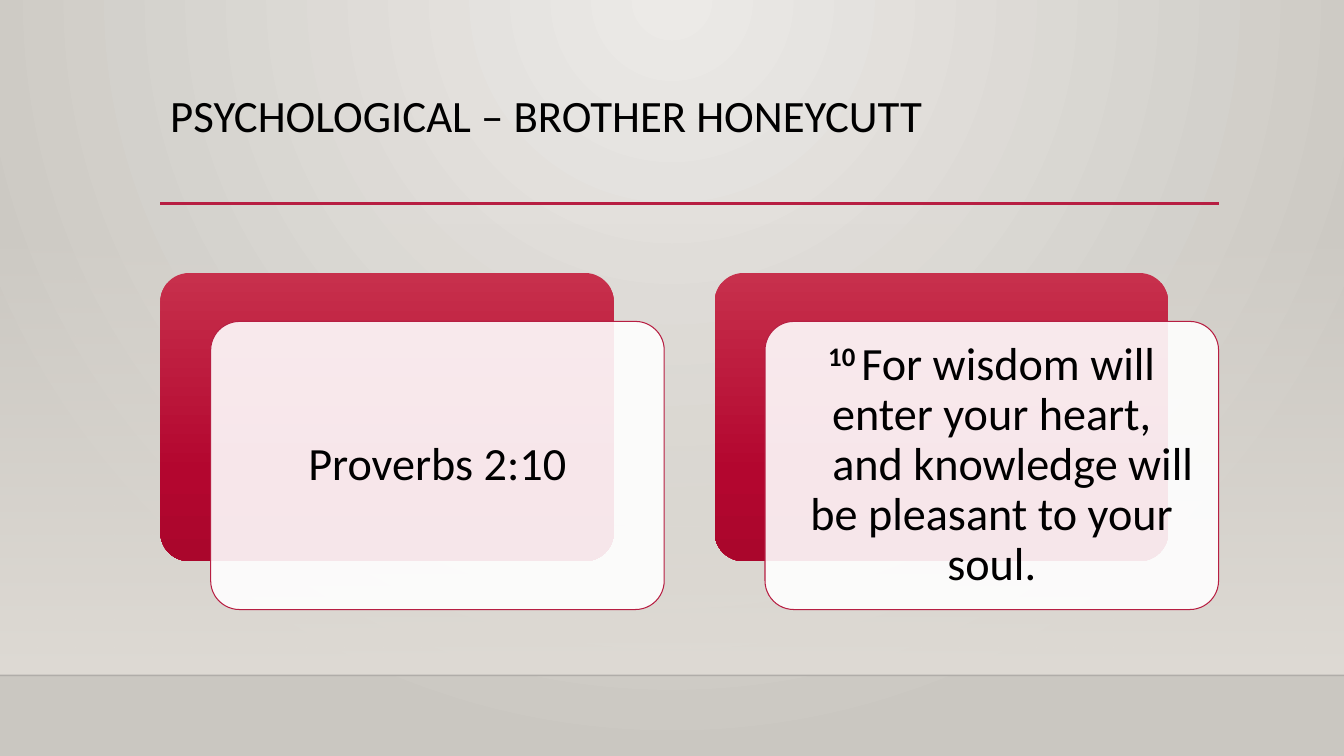
from dataclasses import dataclass
from typing import NamedTuple

from lxml.etree import SubElement
from pptx import Presentation
from pptx.dml.color import RGBColor
from pptx.enum.shapes import MSO_CONNECTOR as Connector, MSO_SHAPE as Preset
from pptx.enum.text import MSO_ANCHOR as Anchor, PP_ALIGN as Align
from pptx.oxml import parse_xml
from pptx.oxml.ns import nsdecls, qn
from pptx.util import Cm, Pt

SLIDE_WIDTH, SLIDE_HEIGHT = 33.87, 19.05
LEFT, RIGHT = 4.04, 30.73
FLOOR = 17.02
CARD_TOP, CARD_WIDTH, CARD_HEIGHT = 6.88, 11.43, 7.26
CARD_STEP = 13.97
OFFSET_X, OFFSET_Y = 1.27, 1.22
CRIMSON, BLACK, WHITE, SAND = "B71E42", "000000", "FFFFFF", "DFDBD5"
DOWNWARD = '<a:lin ang="5400000" scaled="0"/>'
FROM_TOP = '<a:path path="circle"><a:fillToRect l="43000" t="0" r="43000" b="100000"/></a:path>'


class Stop(NamedTuple):
    position: int
    color: str
    opacity: int = 100


@dataclass
class Line:
    text: str
    verse: str = ""
    indent: float = 0


@dataclass
class Card:
    lines: list[Line]


CARD_STOPS = [Stop(0, "C7304C"), Stop(69, "B3062F"), Stop(100, "AA062C")]
CARDS = [
    Card([Line("Proverbs 2:10")]),
    Card([
        Line("For wisdom will enter your heart,", verse="10 "),
        Line("and knowledge will be pleasant to your soul.", indent=1.06),
    ]),
]


def rgb(color: str) -> RGBColor:
    return RGBColor.from_string(color)


def set_opacity(properties, opacity: int) -> None:
    color = next(properties.iter(qn("a:srgbClr")))
    SubElement(color, qn("a:alpha")).set("val", str(opacity * 1000))


def set_gradient(properties, stops: list[Stop], direction: str) -> None:
    marks = "".join(
        f'<a:gs pos="{stop.position * 1000}"><a:srgbClr val="{stop.color}">'
        f'<a:alpha val="{stop.opacity * 1000}"/></a:srgbClr></a:gs>'
        for stop in stops
    )
    gradient = parse_xml(
        f'<a:gradFill {nsdecls("a")} rotWithShape="1"><a:gsLst>{marks}</a:gsLst>{direction}</a:gradFill>'
    )
    properties.replace(properties.find(qn("a:solidFill")), gradient)


def add_block(slide, preset, left: float, top: float, width: float, height: float):
    shape = slide.shapes.add_shape(preset, Cm(left), Cm(top), Cm(width), Cm(height))
    shape.shadow.inherit = False
    shape.fill.solid()
    shape.fill.fore_color.rgb = rgb(WHITE)
    shape.line.fill.background()
    if preset == Preset.ROUNDED_RECTANGLE:
        shape.adjustments[0] = 0.1
    return shape


def add_rule(slide, left: float, right: float, top: float, color: str, width: float, opacity: int = 100) -> None:
    rule = slide.shapes.add_connector(Connector.STRAIGHT, Cm(left), Cm(top), Cm(right), Cm(top))
    rule.line.color.rgb = rgb(color)
    rule.line.width = Pt(width)
    properties = rule._element.spPr
    set_opacity(properties, opacity)
    SubElement(properties, qn("a:effectLst"))


def style_paragraph(paragraph, size: int) -> None:
    paragraph.line_spacing = 0.9
    paragraph.font.name = "Calibri"
    paragraph.font.size = Pt(size)
    paragraph.font.color.rgb = rgb(BLACK)


def add_title(slide, text: str) -> None:
    box = slide.shapes.add_textbox(Cm(LEFT), Cm(2.24), Cm(26.67), Cm(2.92))
    box.text_frame.word_wrap = True
    paragraph = box.text_frame.paragraphs[0]
    paragraph.text = text
    style_paragraph(paragraph, 32)


def write_lines(frame, lines: list[Line]) -> None:
    frame.word_wrap = True
    frame.vertical_anchor = Anchor.MIDDLE
    frame.margin_left = frame.margin_right = Cm(0.36)
    frame.margin_top = frame.margin_bottom = Cm(0.36)
    for index, line in enumerate(lines):
        paragraph = frame.add_paragraph() if index else frame.paragraphs[0]
        paragraph.alignment = Align.CENTER
        style_paragraph(paragraph, 33)
        if line.indent:
            paragraph._p.get_or_add_pPr().set("indent", str(Cm(line.indent)))
        if line.verse:
            verse = paragraph.add_run()
            verse.text = line.verse
            verse.font.bold = True
            verse._r.get_or_add_rPr().set("baseline", "30000")
        paragraph.add_run().text = line.text


def add_card(slide, card: Card, left: float) -> None:
    back = add_block(slide, Preset.ROUNDED_RECTANGLE, left, CARD_TOP, CARD_WIDTH, CARD_HEIGHT)
    set_gradient(back._element.spPr, CARD_STOPS, DOWNWARD)
    front = add_block(
        slide, Preset.ROUNDED_RECTANGLE, left + OFFSET_X, CARD_TOP + OFFSET_Y, CARD_WIDTH, CARD_HEIGHT
    )
    set_opacity(front._element.spPr, 90)
    front.line.color.rgb = rgb(CRIMSON)
    front.line.width = Pt(0.75)
    write_lines(front.text_frame, card.lines)


def add_backdrop(slide) -> None:
    fill = slide.background.fill
    fill.solid()
    fill.fore_color.rgb = rgb(SAND)
    properties = next(slide._element.iter(qn("p:bgPr")))
    set_gradient(properties, [Stop(0, "ECEAE7"), Stop(100, "CAC7C1")], FROM_TOP)
    wall = add_block(slide, Preset.RECTANGLE, 0, 5.61, SLIDE_WIDTH, FLOOR - 5.61)
    set_gradient(wall._element.spPr, [Stop(0, SAND, 0), Stop(100, SAND)], DOWNWARD)
    add_rule(slide, 0, SLIDE_WIDTH, FLOOR, "000001", 1, 20)


def main() -> None:
    presentation = Presentation()
    presentation.slide_width = Cm(SLIDE_WIDTH)
    presentation.slide_height = Cm(SLIDE_HEIGHT)
    slide = presentation.slides.add_slide(presentation.slide_layouts[6])
    add_backdrop(slide)
    add_rule(slide, LEFT, RIGHT, 5.13, CRIMSON, 2.5)
    add_title(slide, "PSYCHOLOGICAL – BROTHER HONEYCUTT")
    for index, card in enumerate(CARDS):
        add_card(slide, card, LEFT + index * CARD_STEP)
    presentation.save("out.pptx")


if __name__ == "__main__":
    main()
